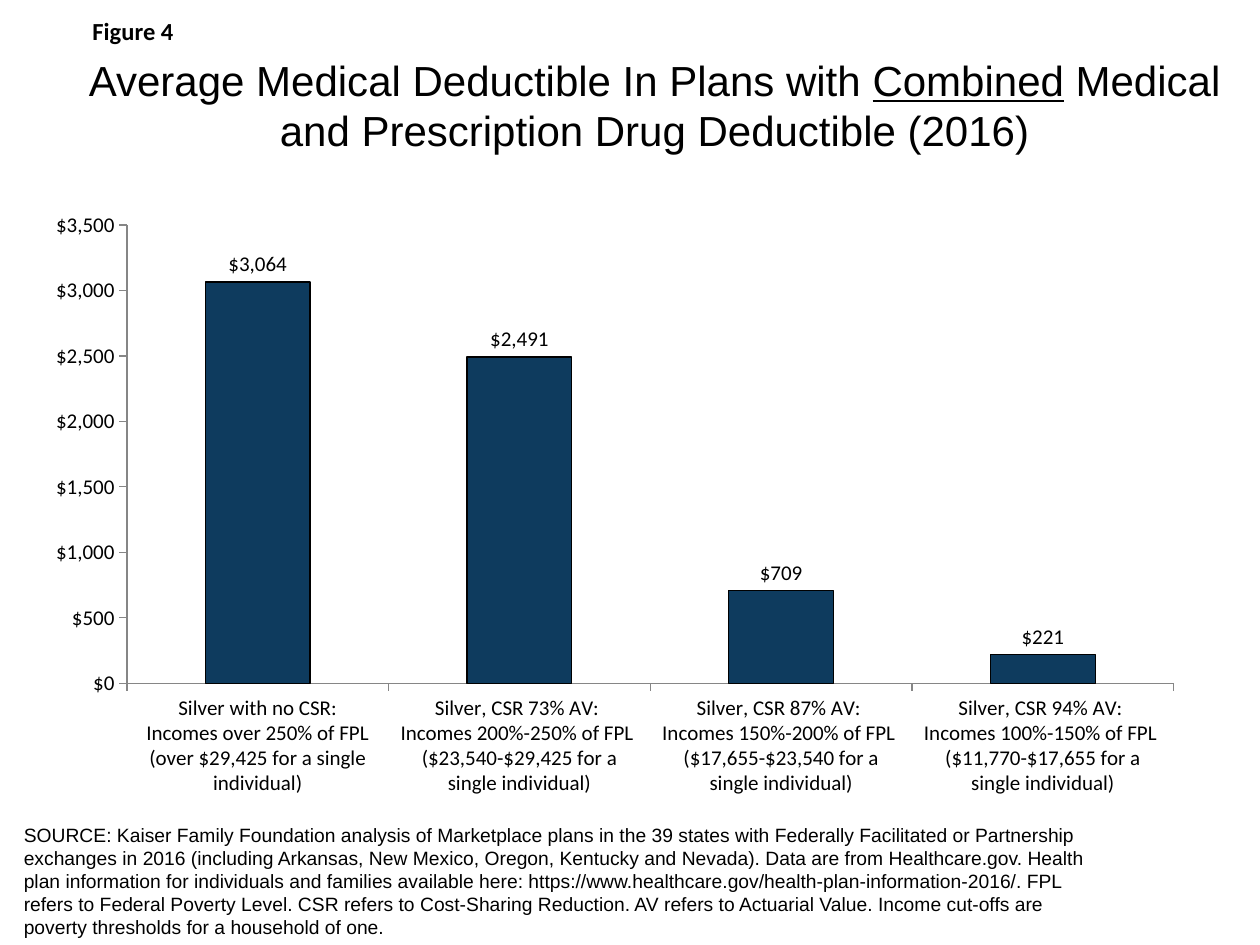
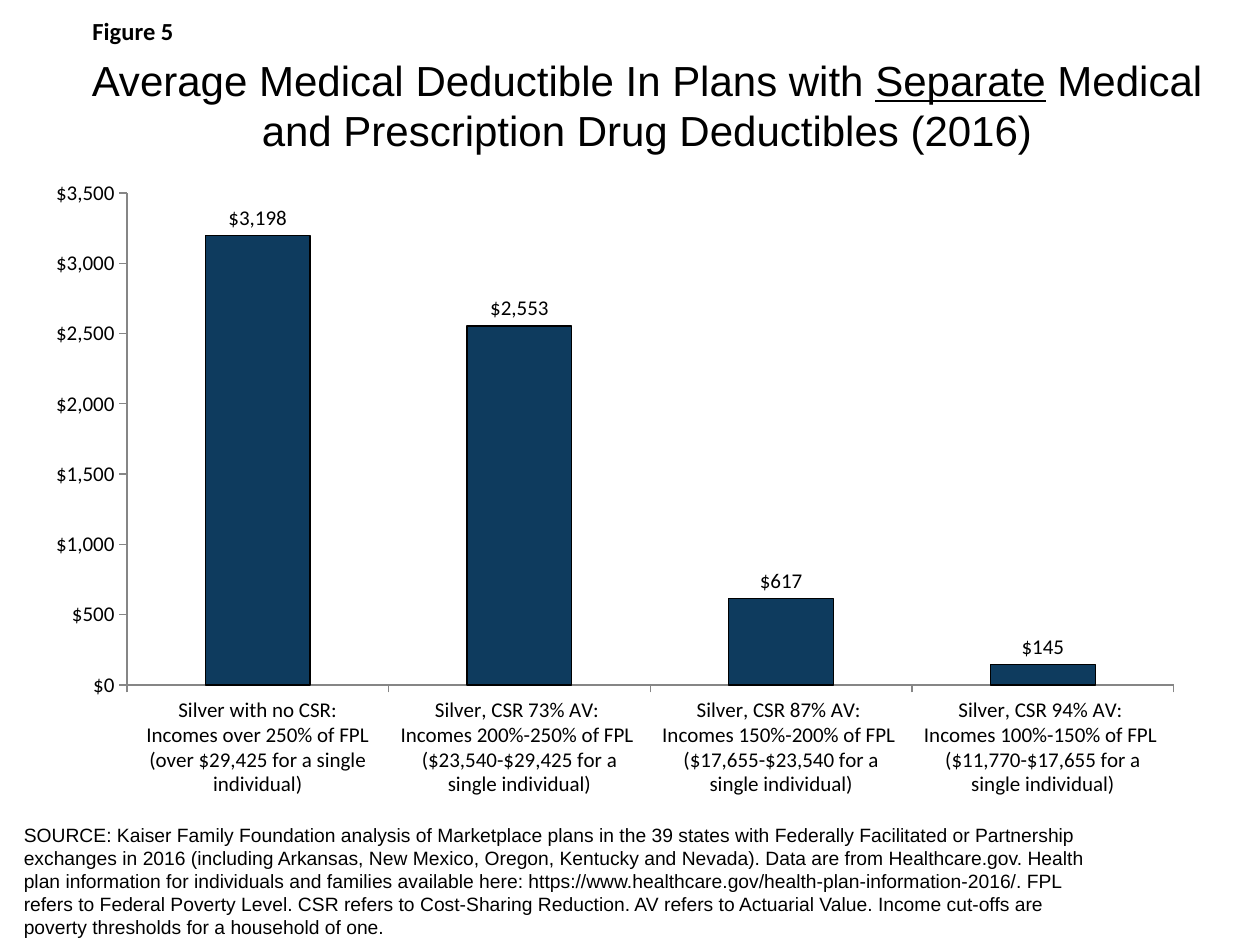
from pptx import Presentation
from pptx.chart.data import CategoryChartData
from pptx.dml.color import RGBColor
from pptx.enum.chart import XL_CHART_TYPE, XL_LABEL_POSITION, XL_TICK_MARK
from pptx.enum.text import MSO_ANCHOR, PP_ALIGN
from pptx.util import Inches, Pt

COLORS = {"text": "000000", "bar": "0E3B5E", "axis": "868686"}
DOLLARS = '"$"#,##0'
INCOME_GROUPS = [
    "Silver with no CSR:\nIncomes over 250% of FPL\n(over $29,425 for a single individual)",
    "Silver, CSR 73% AV: \nIncomes 200%-250% of FPL \n($23,540-$29,425 for a single individual)",
    "Silver, CSR 87% AV: \nIncomes 150%-200% of FPL \n($17,655-$23,540 for a single individual)",
    "Silver, CSR 94% AV: \nIncomes 100%-150% of FPL \n($11,770-$17,655 for a single individual)",
]
SOURCE = (
    "SOURCE: Kaiser Family Foundation analysis of Marketplace plans in the 39 states with "
    "Federally Facilitated or Partnership exchanges in 2016 (including Arkansas, New Mexico, "
    "Oregon, Kentucky and Nevada). Data are from Healthcare.gov. Health plan information for "
    "individuals and families available here: "
    "https://www.healthcare.gov/health-plan-information-2016/. FPL refers to Federal Poverty "
    "Level. CSR refers to Cost-Sharing Reduction. AV refers to Actuarial Value. Income "
    "cut-offs are poverty thresholds for a household of one."
)
FIGURES = [
    {
        "label": "Figure 4",
        "title": ("Average Medical Deductible In Plans with ", "Combined",
                  " Medical and Prescription Drug Deductible (2016)"),
        "title_box": (0.49, 0.33, 9.41, 1),
        "chart_box": (0.26, 1.59, 9.24, 4.82),
        "deductibles": (3064, 2491, 709, 221),
    },
    {
        "label": "Figure 5",
        "title": ("Average Medical Deductible In Plans with ", "Separate",
                  " Medical and Prescription Drug Deductibles (2016)"),
        "title_box": (0.37, 0.33, 9.53, 1),
        "chart_box": (0.26, 1.33, 9.24, 5.1),
        "deductibles": (3198, 2553, 617, 145),
    },
]


def color(name):
    """Return a palette colour."""
    return RGBColor.from_string(COLORS[name])


def style_font(font, size, name="Calibri", bold=False):
    """Apply the shared text colour with the given face and size."""
    font.name = name
    font.size = Pt(size)
    font.bold = bold
    font.color.rgb = color("text")


def add_text(slide, box, runs, size, name="Arial", bold=False,
             align=PP_ALIGN.LEFT, anchor=MSO_ANCHOR.TOP):
    """Add a one-paragraph text box and return its runs."""
    shape = slide.shapes.add_textbox(*map(Inches, box))
    frame = shape.text_frame
    frame.word_wrap = True
    frame.vertical_anchor = anchor
    paragraph = frame.paragraphs[0]
    paragraph.alignment = align
    for text in runs:
        run = paragraph.add_run()
        run.text = text
        style_font(run.font, size, name, bold)
    return paragraph.runs


def add_title(slide, box, runs):
    """Add the centred title with its middle run underlined."""
    title_runs = add_text(slide, box, runs, 24, align=PP_ALIGN.CENTER, anchor=MSO_ANCHOR.MIDDLE)
    title_runs[1].font.underline = True


def style_axis(axis):
    """Give an axis outside ticks, a grey line and no gridlines."""
    axis.has_major_gridlines = False
    axis.major_tick_mark = XL_TICK_MARK.OUTSIDE
    axis.minor_tick_mark = XL_TICK_MARK.NONE
    axis.format.line.color.rgb = color("axis")
    axis.format.line.width = Pt(0.75)
    style_font(axis.tick_labels.font, 12)


def add_deductible_chart(slide, box, deductibles):
    """Add the column chart of deductibles by income group."""
    data = CategoryChartData(number_format=DOLLARS)
    data.categories = INCOME_GROUPS
    data.add_series("Series 1", deductibles)
    frame = slide.shapes.add_chart(XL_CHART_TYPE.COLUMN_CLUSTERED, *map(Inches, box), data)
    chart = frame.chart
    chart.has_legend = False
    chart.has_title = False
    style_font(chart.font, 16)

    style_axis(chart.category_axis)
    style_axis(chart.value_axis)
    chart.value_axis.minimum_scale = 0
    chart.value_axis.maximum_scale = 3500
    chart.value_axis.major_unit = 500
    chart.value_axis.tick_labels.number_format = DOLLARS
    chart.value_axis.tick_labels.number_format_is_linked = False

    plot = chart.plots[0]
    plot.gap_width = 150
    plot.vary_by_categories = False
    bars = plot.series[0]
    bars.format.fill.solid()
    bars.format.fill.fore_color.rgb = color("bar")
    bars.format.line.color.rgb = color("text")
    bars.format.line.width = Pt(0.75)
    labels = bars.data_labels
    labels.show_value = True
    labels.position = XL_LABEL_POSITION.OUTSIDE_END
    labels.number_format = DOLLARS
    labels.number_format_is_linked = False
    style_font(labels.font, 12)


def add_figure_slide(presentation, figure):
    """Add one figure slide with source note, chart, title and label."""
    slide = presentation.slides.add_slide(presentation.slide_layouts[6])
    add_text(slide, (0.09, 6.47, 8.75, 1.03), [SOURCE], 11, anchor=MSO_ANCHOR.BOTTOM)
    add_deductible_chart(slide, figure["chart_box"], figure["deductibles"])
    add_title(slide, figure["title_box"], figure["title"])
    add_text(slide, (0.18, 0.08, 1.75, 0.34), [figure["label"]], 14, "Calibri", True,
             PP_ALIGN.CENTER)


def main():
    """Build and save the presentation."""
    presentation = Presentation()
    presentation.slide_width = Inches(10)
    presentation.slide_height = Inches(7.5)
    for figure in FIGURES:
        add_figure_slide(presentation, figure)
    presentation.save("out.pptx")


if __name__ == "__main__":
    main()
